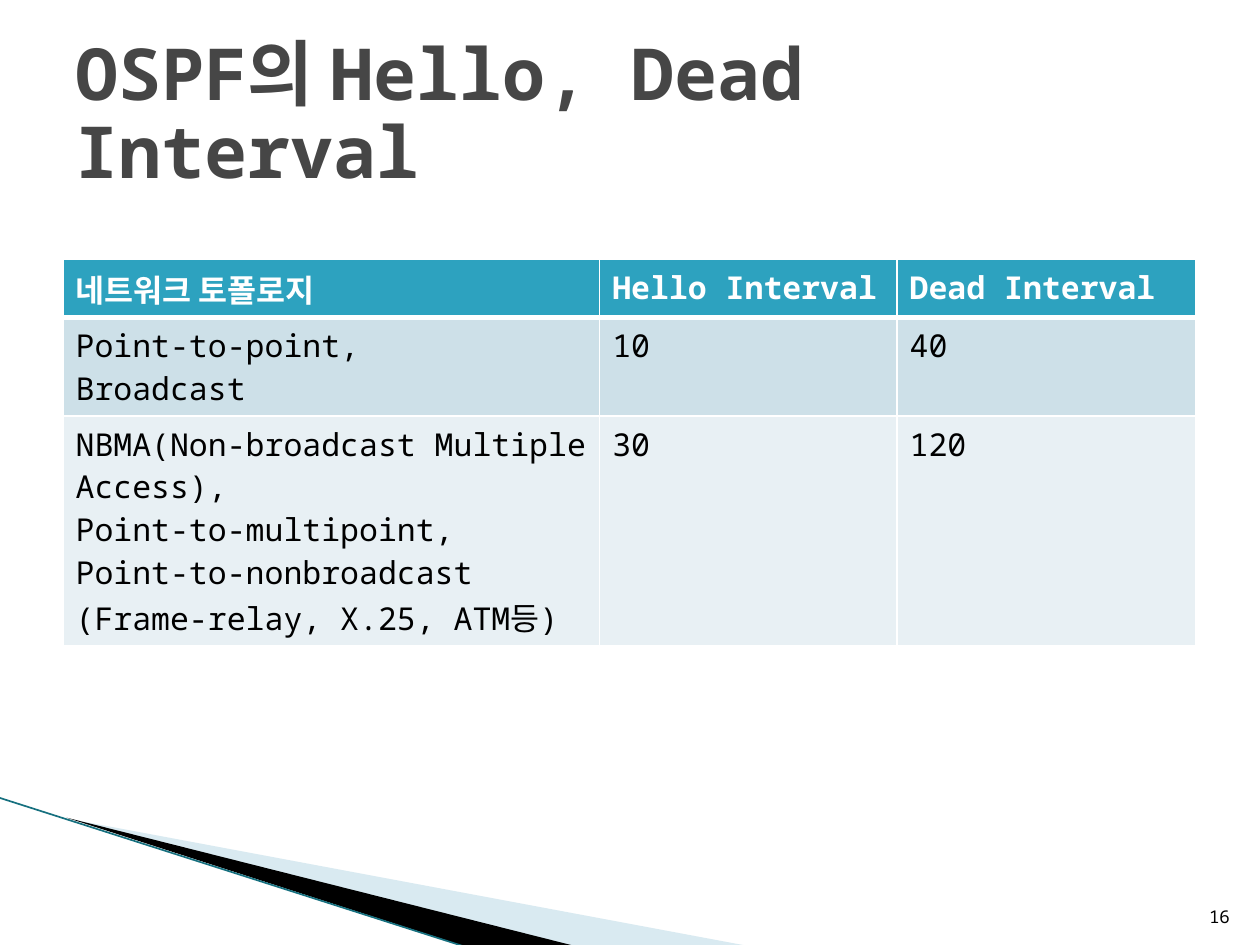
from lxml import etree
from pptx import Presentation
from pptx.dml.color import RGBColor
from pptx.enum.shapes import MSO_CONNECTOR
from pptx.enum.text import MSO_ANCHOR, MSO_AUTO_SIZE, PP_ALIGN
from pptx.oxml.ns import qn
from pptx.util import Inches, Pt

LINE = MSO_CONNECTOR.STRAIGHT
MIDDLE, BOTTOM = MSO_ANCHOR.MIDDLE, MSO_ANCHOR.BOTTOM
LEFT, RIGHT = PP_ALIGN.LEFT, PP_ALIGN.RIGHT
NO_FIT = MSO_AUTO_SIZE.NONE


def color(code):
    return RGBColor.from_string(code)


class Deck:
    face = "Noto Sans Mono"
    ink, white, gray = "000000", "FFFFFF", "464646"
    fills = ["2DA2BF", "CDE0E8", "E8F0F4"]

    def __init__(self):
        self.prs = Presentation()
        self.prs.slide_width, self.prs.slide_height = Inches(10), Inches(7.5)
        self.slide = self.prs.slides.add_slide(self.prs.slide_layouts[5])
        self.shapes = self.slide.shapes

    def style(self, frame, text, size, code, bold=False, align=LEFT):
        frame.text = text
        for para in frame.paragraphs:
            para.alignment = align
            font = para.font
            font.name, font.size, font.bold = self.face, Pt(size), bold
            font.color.rgb = color(code)

    def title(self, text, *box):
        shape = self.shapes.title
        shape.left, shape.top, shape.width, shape.height = map(Inches, box)
        frame = shape.text_frame
        frame.word_wrap, frame.auto_size = True, NO_FIT
        frame.vertical_anchor = MIDDLE
        self.style(frame, text, 41, self.gray, True)
        frame.paragraphs[0].line_spacing = 0.9

    def label(self, text, *box):
        frame = self.shapes.add_textbox(*map(Inches, box)).text_frame
        frame.word_wrap, frame.vertical_anchor = True, BOTTOM
        self.style(frame, text, 10, self.ink, align=RIGHT)

    def wedge(self, points, code, alpha=None):
        spots = [(Inches(x), Inches(y)) for x, y in points]
        form = self.shapes.build_freeform(*spots[0])
        form.add_line_segments(spots[1:], close=True)
        shape = form.convert_to_shape()
        shape.shadow.inherit = False
        shape.fill.solid()
        shape.fill.fore_color.rgb = color(code)
        shape.line.fill.background()
        if alpha:
            tone = shape._element.spPr.find(qn("a:solidFill"))[0]
            etree.SubElement(tone, qn("a:alpha")).set("val", str(alpha * 1000))

    def line(self, code, width, *ends):
        link = self.shapes.add_connector(LINE, *map(Inches, ends))
        link.line.color.rgb, link.line.width = color(code), Pt(width)
        etree.SubElement(link._element.spPr, qn("a:effectLst"))

    def edge(self, cell, low):
        props = cell._tc.get_or_add_tcPr()
        sides = {"lnL": 1, "lnR": 1, "lnT": 1, "lnB": low}
        for at, (tag, width) in enumerate(sides.items()):
            side = etree.Element(qn("a:" + tag), w=str(Pt(width)))
            fill = etree.SubElement(side, qn("a:solidFill"))
            etree.SubElement(fill, qn("a:srgbClr"), val=self.white)
            props.insert(at, side)

    def table(self, rows, widths, left, top, height):
        box = map(Inches, (left, top, sum(widths), height * len(rows)))
        grid = self.shapes.add_table(len(rows), len(widths), *box).table
        for col, width in zip(grid.columns, widths):
            col.width = Inches(width)
        for r, row in enumerate(rows):
            head = r == 0
            for c, text in enumerate(row):
                cell = grid.cell(r, c)
                cell.fill.solid()
                cell.fill.fore_color.rgb = color(self.fills[r])
                code = self.white if head else self.ink
                self.style(cell.text_frame, text, 18, code, head)
                self.edge(cell, 3 if head else 1)


def main():
    deck = Deck()
    deck.wedge([(0.55, 6.5), (5.95, 7.51), (4.56, 7.51)], "A0CBDC", 40)
    deck.wedge([(0.53, 6.49), (4.57, 7.51), (3.72, 7.52)], deck.ink)
    deck.line("16707F", 0.95, -0.01, 6.33, 3.71, 7.52)
    rows = [
        ("네트워크 토폴로지", "Hello Interval", "Dead Interval"),
        ("Point-to-point,\nBroadcast", "10", "40"),
        ("NBMA(Non-broadcast Multiple Access),\nPoint-to-multipoint,\n"
         "Point-to-nonbroadcast (Frame-relay, X.25, ATM등)", "30", "120"),
    ]
    deck.table(rows, [4.26, 2.36, 2.37], 0.5, 2.06, 0.41)
    deck.title("OSPF의 Hello, Dead Interval", 0.5, 0.3, 9, 1.25)
    deck.label("16", 9.46, 7.01, 0.4, 0.4)
    deck.prs.save("out.pptx")


if __name__ == "__main__":
    main()
